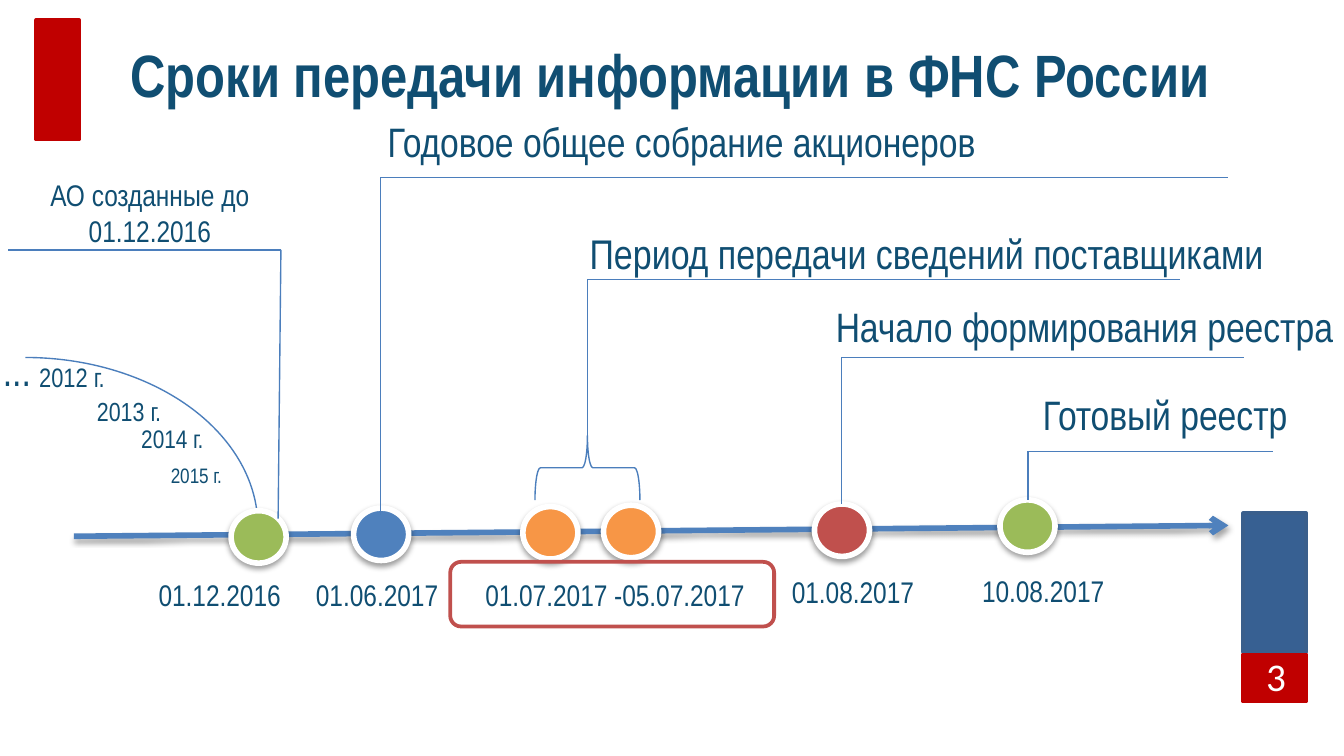
from lxml.etree import SubElement
from pptx import Presentation
from pptx.dml.color import RGBColor
from pptx.enum.shapes import MSO_CONNECTOR, MSO_SHAPE
from pptx.enum.text import MSO_ANCHOR, PP_ALIGN
from pptx.oxml.ns import qn
from pptx.util import Pt

NAVY = RGBColor(0x10, 0x4E, 0x72)
RED = RGBColor(0xC0, 0x00, 0x00)
STEEL = RGBColor(0x37, 0x60, 0x92)
STEEL_EDGE = RGBColor(0x3A, 0x5F, 0x8C)
BLUE = RGBColor(0x4F, 0x81, 0xBD)
THIN_BLUE = RGBColor(0x4B, 0x7E, 0xBC)
GREEN = RGBColor(0x9B, 0xBB, 0x59)
ORANGE = RGBColor(0xF7, 0x96, 0x46)
BRICK = RGBColor(0xC0, 0x50, 0x4D)
WHITE = RGBColor(0xFF, 0xFF, 0xFF)
FONT = "Arial Narrow"

# Content: lengths in points
TITLE = "Сроки передачи информации в ФНС России"
BLOCKS = [  # left, top, width, height, fill, line
    (19.4, 10.8, 23, 64, RED, RED),
    (666, 275, 33.8, 74.2, STEEL, STEEL_EDGE),
    (666, 350.6, 33.8, 25.2, RED, RED),
]
AXIS = (39.6, 287.3, 658.1, 281.5)
DOT_W, DOT_H = 29.5, 28.1
DOTS = [  # left, top, fill
    (123.8, 273.6, GREEN), (189.4, 272.2, BLUE), (280.1, 271.4, ORANGE),
    (323.3, 270.7, ORANGE), (436.3, 270, BRICK), (535.7, 267.8, GREEN),
]
LEADERS = [  # foot x, foot y, corner x, corner y, end x
    (149, 277.9, 150.5, 133.9, 4.3),
    (203.8, 275.8, 203.8, 95, 658.1),
    (314.6, 237.6, 314.6, 149.8, 632.2),
    (450.7, 270, 450.7, 191.5, 666.7),
    (550.8, 267.8, 550.8, 241.9, 681.8),
]
DATES = [  # text, left, top, width, height
    ("01.12.2016", 77, 301.7, 108, 33.8),
    ("01.06.2017", 161.3, 303.8, 97.9, 29.5),
    ("01.07.2017 -05.07.2017", 252, 303.8, 158.4, 29.5),
    ("01.08.2017", 416.2, 300.2, 82.1, 33.8),
    ("10.08.2017", 518.1, 299.5, 98, 33.8),
]
EVENTS = [  # text, left, top, width, height, size, line spacing
    ("АО созданные до 01.12.2016", 5.8, 94.3, 149, 38.9, 16, 1),
    ("Годовое общее собрание акционеров", 153.4, 56.2, 423.4, 38.9, 22, 1),
    ("Период передачи сведений поставщиками", 275.8, 114.5, 441.4, 38.9, 22.2, 1.1),
    ("Начало формирования реестра", 426.2, 154.1, 309.6, 38.9, 22, 1.1),
    ("Готовый реестр", 519.8, 205.2, 208.8, 33.8, 22, 1),
]
YEARS = [  # text, left, top, size, line spacing
    ("...", -6.5, 185.8, 22.1, 0.8),
    ("2012 г.", 13, 188.6, 14.3, 0.8),
    ("2013 г.", 43.9, 205.2, 14, 1),
    ("2014 г.", 67.7, 221, 13.6, 0.9),
    ("2015 г.", 83.5, 241.2, 11.2, 0.8),
]

prs = Presentation()
prs.slide_width, prs.slide_height = Pt(720), Pt(405)
s = prs.slides.add_slide(prs.slide_layouts[5])


def format_text(sp, text, size, color=NAVY, font=FONT, bold=False,
                align=PP_ALIGN.LEFT, spacing=1):
    tf = sp.text_frame
    tf.text = text
    tf.word_wrap = True
    tf.vertical_anchor = MSO_ANCHOR.MIDDLE
    tf.margin_left = Pt(8)
    tf.margin_right = Pt(8 if align == PP_ALIGN.CENTER else 0)
    tf.margin_top = tf.margin_bottom = Pt(4.3)
    p = tf.paragraphs[0]
    p.alignment, p.line_spacing = align, spacing
    f = p.runs[0].font
    f.name, f.size, f.bold = font, Pt(size), bold
    f.color.rgb = color


def add_text(text, x, y, w, h, size, **style):
    format_text(s.shapes.add_textbox(Pt(x), Pt(y), Pt(w), Pt(h)), text, size, **style)


def add_shape(kind, x, y, w, h, fill, line, weight):
    sp = s.shapes.add_shape(kind, Pt(x), Pt(y), Pt(w), Pt(h))
    if fill is None:
        sp.fill.background()
    else:
        sp.fill.solid()
        sp.fill.fore_color.rgb = fill
    sp.line.color.rgb = line
    sp.line.width = Pt(weight)
    sp.shadow.inherit = False
    return sp


def add_line(x1, y1, x2, y2, color, weight):
    ln = s.shapes.add_connector(MSO_CONNECTOR.STRAIGHT, Pt(x1), Pt(y1), Pt(x2), Pt(y2))
    ln.line.color.rgb = color
    ln.line.width = Pt(weight)
    SubElement(ln._element.spPr, qn("a:effectLst"))
    return ln


def add_shadow(sp, opacity):
    effects = sp._element.spPr.find(qn("a:effectLst"))
    shadow = SubElement(effects, qn("a:outerShdw"), blurRad=str(Pt(3.1)),
                        dist=str(Pt(1.7)), dir="5400000", rotWithShape="0")
    color = SubElement(shadow, qn("a:srgbClr"), val="000000")
    SubElement(color, qn("a:alpha"), val=str(opacity * 1000))


# Title
title = s.shapes.title
title.left, title.top, title.width, title.height = Pt(62), Pt(11.5), Pt(638.6), Pt(55.4)
format_text(title, TITLE, 32, bold=True)

# Decorative blocks and page number
for x, y, w, h, fill, line in BLOCKS:
    add_shape(MSO_SHAPE.RECTANGLE, x, y, w, h, fill, line, 2)
add_text("3", 663.8, 344.9, 39.6, 40.3, 21, color=WHITE, font="Calibri",
         align=PP_ALIGN.CENTER, spacing=Pt(18.8))

# Time axis
axis = add_line(*AXIS, BLUE, 3)
SubElement(axis.line._get_or_add_ln(), qn("a:tailEnd"), type="arrow")
add_shadow(axis, 35)

# Arc over the earlier years, brace over the reporting period
add_shape(MSO_SHAPE.ARC, -110.9, 191.5, 249.1, 181.4, None, THIN_BLUE, 0.75)
brace = add_shape(MSO_SHAPE.LEFT_BRACE, 297.4, 222.5, 34.6, 56.2, None, THIN_BLUE, 0.75)
brace.rotation = 90

# Milestones
for x, y, fill in DOTS:
    add_shadow(add_shape(MSO_SHAPE.OVAL, x, y, DOT_W, DOT_H, fill, WHITE, 3), 38)

# Leaders: upright, then shelf under the event name
for foot_x, foot_y, x, y, end_x in LEADERS:
    add_line(foot_x, foot_y, x, y, THIN_BLUE, 0.75)
    add_line(x, y, end_x, y, THIN_BLUE, 0.75)

# Labels
for text, x, y, w, h in DATES:
    add_text(text, x, y, w, h, 16)
for text, x, y, w, h, size, spacing in EVENTS:
    add_text(text, x, y, w, h, size, align=PP_ALIGN.CENTER, spacing=spacing)
for text, x, y, size, spacing in YEARS:
    add_text(text, x, y, 53.3, 29.5, size, spacing=spacing)

# Frame around the reporting period
add_shape(MSO_SHAPE.ROUNDED_RECTANGLE, 241.2, 301, 173.5, 34.6, None, BRICK, 2)

prs.save("out.pptx")
